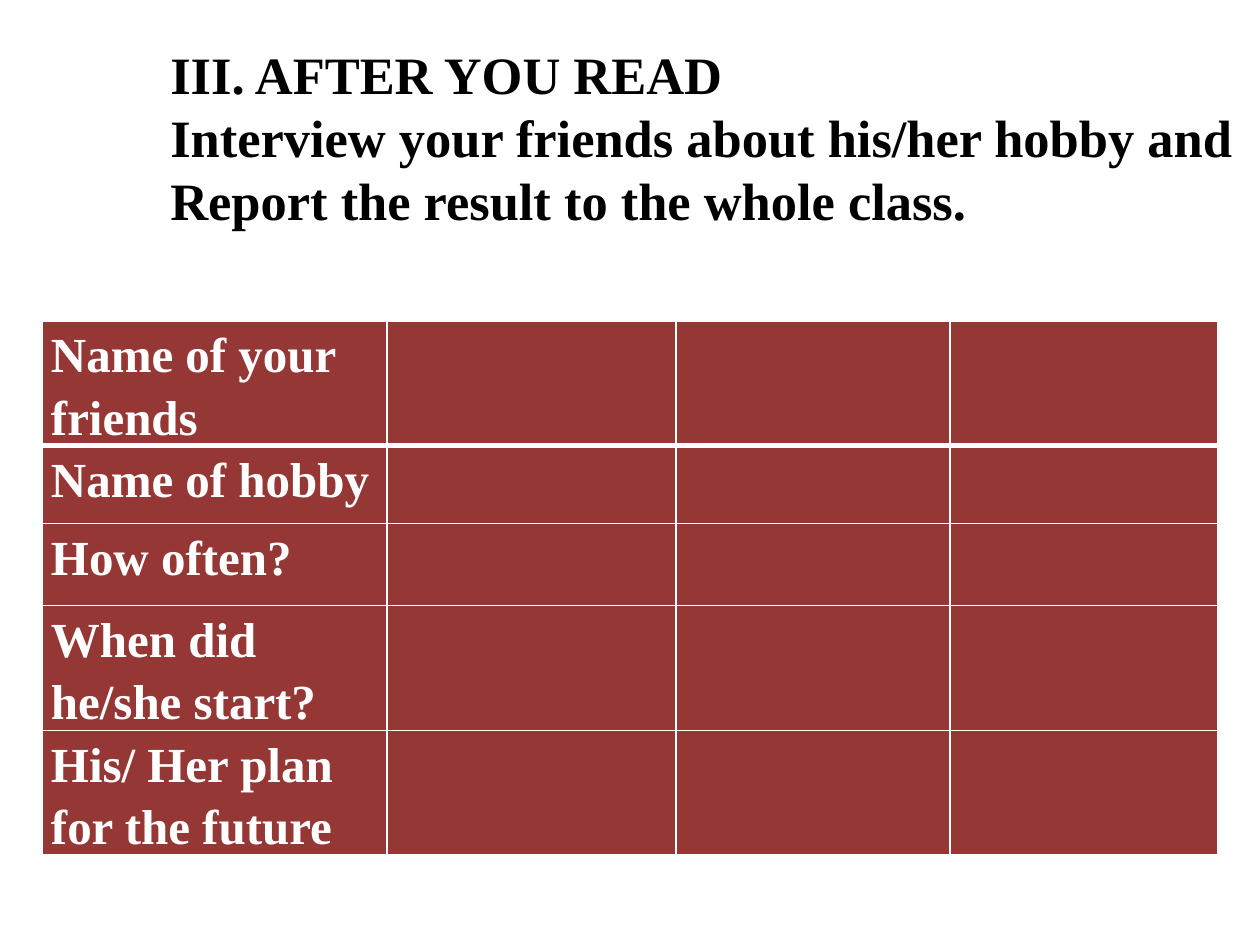
"""Build the hobby interview slide."""
from dataclasses import dataclass
from lxml import etree
from pptx import Presentation
from pptx.dml.color import RGBColor
from pptx.enum.text import MSO_ANCHOR, MSO_AUTO_SIZE
from pptx.oxml.ns import qn
from pptx.util import Emu, Pt

MIDDLE = MSO_ANCHOR.MIDDLE
GROW = MSO_AUTO_SIZE.SHAPE_TO_FIT_TEXT
SCALE = 914400 / 126
RED, WHITE, BLACK = "953735", "FFFFFF", "000000"
FONT = {"name": "Times New Roman", "bold": True}
TITLE = ("III. AFTER YOU READ",
         "Interview your friends about his/her hobby and",
         "Report the result to the whole class.")
WIDTHS = (345, 289, 274, 268)


@dataclass
class Row:
    """A table row: its label, height in px and rule widths in points."""
    label: str
    height: int
    top: int = 1
    base: int = 1


ROWS = (
    Row("Name of your friends", 79, base=3),
    Row("Name of hobby", 78, top=3),
    Row("How often?", 82),
    Row("When did he/she start?", 74),
    Row("His/ Her plan for the future", 74),
)


def px(size: int) -> Emu:
    """Turn px into EMU."""
    return Emu(round(size * SCALE))


def tint(code: str) -> RGBColor:
    """Turn a hex string into a colour."""
    return RGBColor.from_string(code)


def apply(item, values: dict) -> None:
    """Set each named value on an item."""
    for name, value in values.items():
        setattr(item, name, value)


def write(para, text: str, size: int, code: str) -> None:
    """Add a styled run to a paragraph."""
    run = para.add_run()
    run.text = text
    apply(run.font, FONT | {"size": Pt(size)})
    run.font.color.rgb = tint(code)


def border(cell, sides: dict[str, int]) -> None:
    """Draw white rules on the sides of a cell."""
    props = cell._tc.get_or_add_tcPr()
    for spot, (side, width) in enumerate(sides.items()):
        line = etree.Element(qn(f"a:ln{side}"), w=str(Pt(width)))
        fill = etree.SubElement(line, qn("a:solidFill"))
        etree.SubElement(fill, qn("a:srgbClr"), val=WHITE)
        props.insert(spot, line)


def fill_row(table, index: int, row: Row) -> None:
    """Fill one row of the table."""
    table.rows[index].height = px(row.height)
    for cell in table.rows[index].cells:
        cell.fill.solid()
        cell.fill.fore_color.rgb = tint(RED)
        border(cell, {"L": 1, "R": 1, "T": row.top, "B": row.base})
    head = table.cell(index, 0)
    apply(head, {"margin_left": px(9), "margin_right": px(9),
                 "margin_top": 0, "margin_bottom": 0})
    para = head.text_frame.paragraphs[0]
    para.line_spacing = 1.15
    write(para, row.label, 28, WHITE)


def add_grid(slide) -> None:
    """Add the interview table."""
    frame = slide.shapes.add_table(len(ROWS), len(WIDTHS), px(42), px(321),
                                   px(sum(WIDTHS)), px(566))
    table = frame.table
    for column, width in zip(table.columns, WIDTHS):
        column.width = px(width)
    for index, row in enumerate(ROWS):
        fill_row(table, index, row)
    frame.height = px(566)


def add_title(slide) -> None:
    """Add the task heading."""
    box = slide.shapes.add_textbox(px(158), px(35), px(1111), px(204))
    frame = box.text_frame
    apply(frame, {"word_wrap": False, "auto_size": GROW,
                  "vertical_anchor": MIDDLE})
    for index, text in enumerate(TITLE):
        para = frame.add_paragraph() if index else frame.paragraphs[0]
        write(para, text, 30, BLACK)


def main() -> None:
    """Build and save the slide."""
    deck = Presentation()
    apply(deck, {"slide_width": px(1260), "slide_height": px(945)})
    slide = deck.slides.add_slide(deck.slide_layouts[6])
    add_grid(slide)
    add_title(slide)
    deck.save("out.pptx")


if __name__ == "__main__":
    main()
